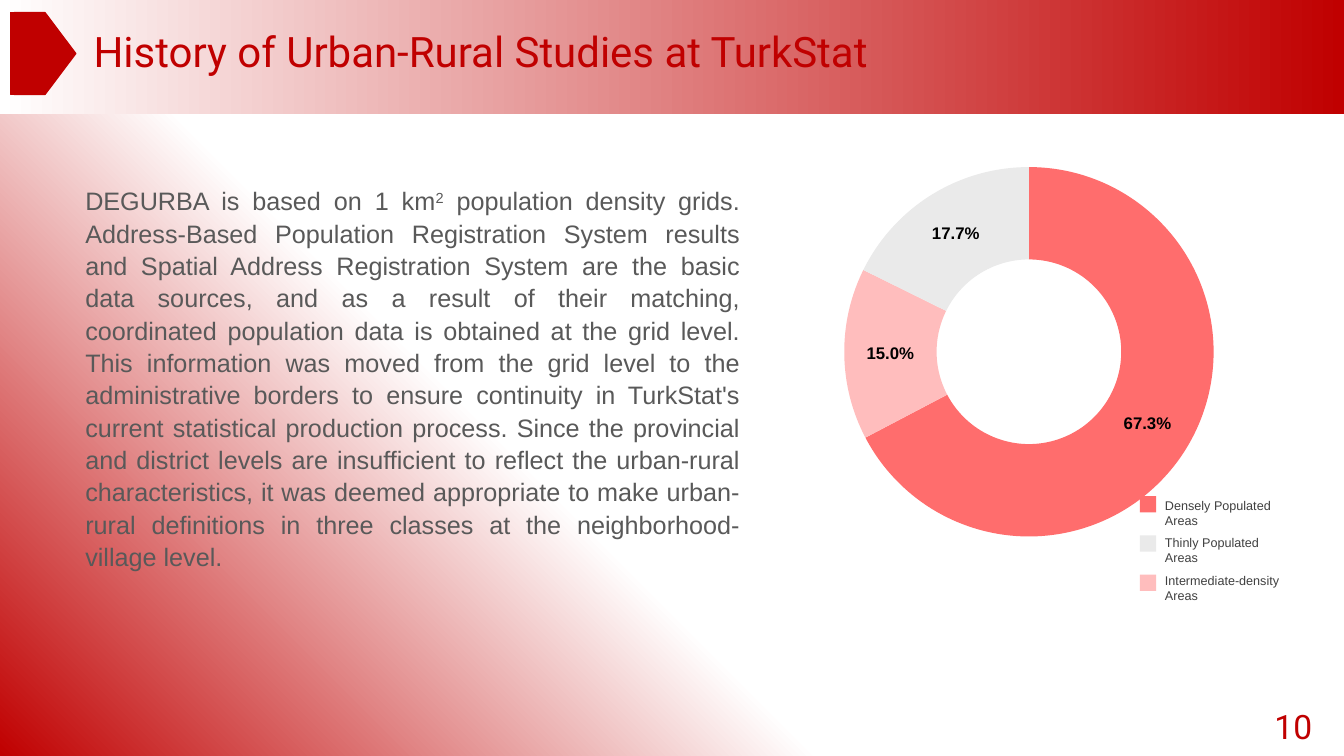
from pptx import Presentation
from pptx.chart.data import CategoryChartData
from pptx.dml.color import RGBColor
from pptx.enum.chart import XL_CHART_TYPE as ChartType
from pptx.enum.shapes import MSO_SHAPE as Shape
from pptx.enum.text import MSO_ANCHOR as Anchor, PP_ALIGN as Align
from pptx.util import Cm, Pt

RED, WHITE, GRAY = "C00000", "FFFFFF", "595959"
DENSE, THIN, INTERMEDIATE = "FF6D6D", "EAEAEA", "FFBDBD"

BODY_START = "DEGURBA is based on 1 km"
BODY_END = (
    " population density grids. Address-Based Population Registration System results "
    "and Spatial Address Registration System are the basic data sources, and as a "
    "result of their matching, coordinated population data is obtained at the grid "
    "level. This information was moved from the grid level to the administrative "
    "borders to ensure continuity in TurkStat's current statistical production "
    "process. Since the provincial and district levels are insufficient to reflect "
    "the urban-rural characteristics, it was deemed appropriate to make urban-rural "
    "definitions in three classes at the neighborhood-village level."
)


def rgb(color):
    return RGBColor.from_string(color)


def apply_gradient(fill, start, end, angle, end_position=1.0):
    fill.gradient()
    fill.gradient_angle = angle
    first, last = fill.gradient_stops
    first.color.rgb, first.position = rgb(start), 0
    last.color.rgb, last.position = rgb(end), end_position


class SlideBuilder:
    heading_font = "Roboto"
    body_font = "Arial"

    def __init__(self, presentation):
        self.slide = presentation.slides.add_slide(presentation.slide_layouts[6])

    def background(self, start, end, angle, end_position):
        apply_gradient(self.slide.background.fill, start, end, angle, end_position)

    def shape(self, kind, left, top, width, height, color, line_width=None):
        shape = self.slide.shapes.add_shape(
            kind, Cm(left), Cm(top), Cm(width), Cm(height))
        shape.shadow.inherit = False
        shape.fill.solid()
        shape.fill.fore_color.rgb = rgb(color)
        if line_width:
            shape.line.color.rgb = rgb(color)
            shape.line.width = Pt(line_width)
        else:
            shape.line.fill.background()
        return shape

    def text(self, runs, left, top, width, height, size, color, font=None,
             align=Align.LEFT, anchor=Anchor.TOP, line_spacing=1.0,
             space_after=0, side_inset=0.25):
        box = self.slide.shapes.add_textbox(Cm(left), Cm(top), Cm(width), Cm(height))
        frame = box.text_frame
        frame.word_wrap = True
        frame.vertical_anchor = anchor
        frame.margin_left = frame.margin_right = Cm(side_inset)
        paragraph = frame.paragraphs[0]
        paragraph.alignment = align
        paragraph.line_spacing = line_spacing
        paragraph.space_after = Pt(space_after)
        for content, superscript in runs:
            run = paragraph.add_run()
            run.text = content
            run.font.name = font or self.body_font
            run.font.size = Pt(size)
            run.font.color.rgb = rgb(color)
            if superscript:
                run.font._element.set("baseline", "30000")

    def doughnut(self, left, top, width, height, values, colors):
        data = CategoryChartData(number_format="0.0%")
        data.categories = [str(number) for number in range(1, len(values) + 1)]
        data.add_series("Series 1", values)
        chart = self.slide.shapes.add_chart(
            ChartType.DOUGHNUT, Cm(left), Cm(top), Cm(width), Cm(height), data).chart
        chart.has_legend = False
        chart.has_title = False
        chart.font.name = "Calibri"
        chart.font.size = Pt(18)
        chart.font.color.rgb = rgb("000000")
        plot = chart.plots[0]
        plot.vary_by_categories = True
        for index, color in enumerate(colors):
            point = plot.series[0].points[index]
            point.format.fill.solid()
            point.format.fill.fore_color.rgb = rgb(color)
            point.format.line.fill.background()
        labels = plot.series[0].data_labels
        labels.show_value = True
        labels.show_percentage = False
        labels.number_format = "0.0%"
        labels.number_format_is_linked = False
        labels.font.name = self.body_font
        labels.font.size = Pt(12)
        labels.font.bold = True
        labels.font.color.rgb = rgb("000000")

    def legend(self, left, top, entries):
        for index, (label, color) in enumerate(entries):
            self.shape(Shape.RECTANGLE, left, top + 0.99 * index, 0.41, 0.41, color)
            self.text([(label, False)], left + 0.63, top - 0.08 + 0.94 * index,
                      2.95, 1.02, size=9, color="404040", side_inset=0)


def main():
    presentation = Presentation()
    presentation.slide_width, presentation.slide_height = Cm(33.87), Cm(19.05)
    builder = SlideBuilder(presentation)

    builder.background(RED, WHITE, angle=45, end_position=0.39)
    band = builder.shape(Shape.RECTANGLE, 0, 0, 33.87, 2.87, WHITE)
    apply_gradient(band.fill, WHITE, RED, angle=0)
    builder.shape(Shape.PENTAGON, 0.36, 0.32, 1.55, 2.06, RED, line_width=1)
    builder.shape(Shape.RECTANGLE, 0.26, 0.32, 0.74, 2.06, RED, line_width=0.75)

    builder.text([("History of Urban-Rural Studies at TurkStat", False)],
                 2.11, 0.61, 22.33, 1.5, size=30, color=RED,
                 font=builder.heading_font, anchor=Anchor.MIDDLE, line_spacing=0.9)
    builder.text([(BODY_START, False), ("2", True), (BODY_END, False)],
                 1.9, 4.5, 17.0, 10.08, size=18, color=GRAY,
                 align=Align.JUSTIFY, line_spacing=1.07, space_after=6)
    builder.doughnut(20.37, 3.86, 11.05, 10.01,
                     (0.673, 0.15, 0.177), (DENSE, INTERMEDIATE, THIN))
    builder.legend(28.73, 12.5, [
        ("Densely Populated Areas", DENSE),
        ("Thinly Populated Areas", THIN),
        ("Intermediate-density Areas", INTERMEDIATE),
    ])
    builder.text([("10", False)], 31.62, 17.78, 1.7, 1.02, size=24, color=RED,
                 font=builder.heading_font, align=Align.RIGHT, anchor=Anchor.MIDDLE)

    presentation.save("out.pptx")


if __name__ == "__main__":
    main()
